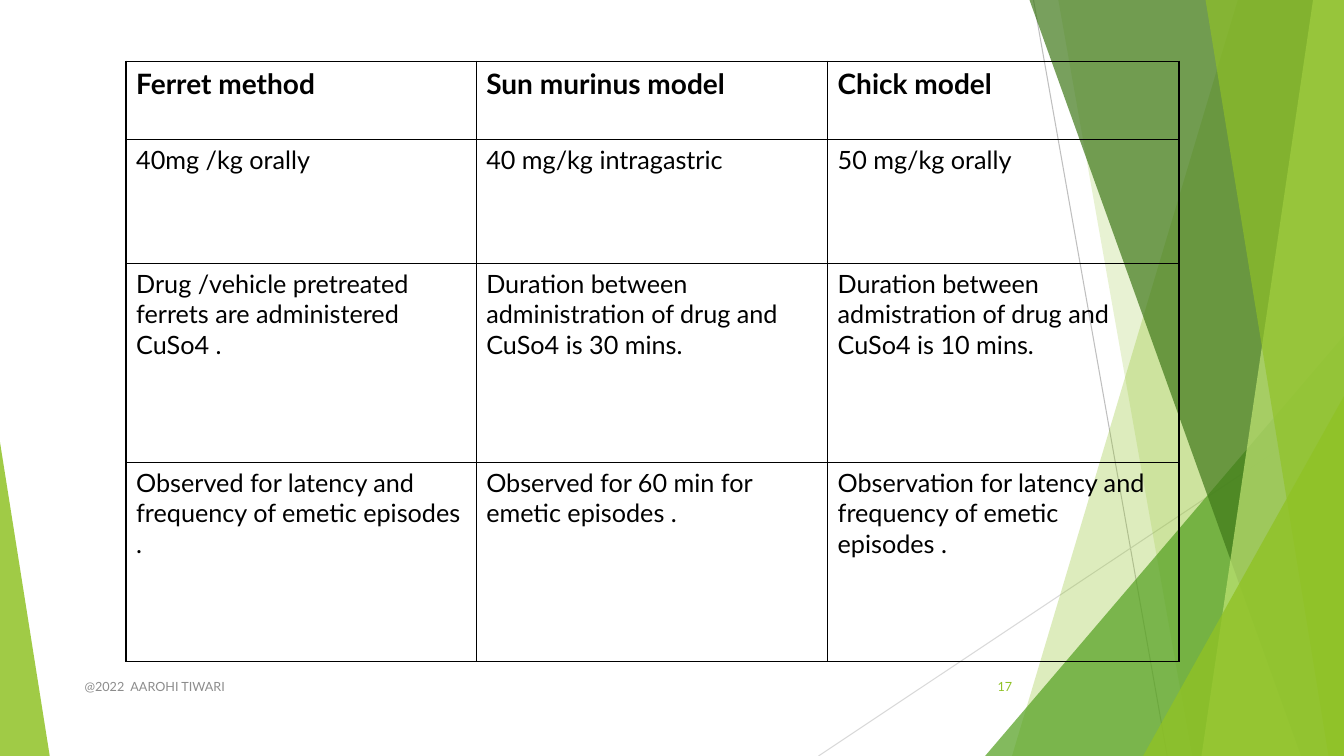
from pptx import Presentation
from pptx.dml.color import RGBColor as Rgb
from pptx.enum.shapes import MSO_CONNECTOR as Link, MSO_SHAPE as Kind
from pptx.enum.text import MSO_ANCHOR as Anchor, PP_ALIGN as Align
from pptx.oxml import parse_xml
from pptx.oxml.ns import nsdecls, qn
from pptx.util import Inches, Pt
from lxml.etree import SubElement as Sub

HUES = {
    "lime": "90C226", "leaf": "54A021", "moss": "3F7819", "pale": "C0E474",
    "ash": "BFBFBF", "mist": "D9D9D9", "gray": "8C8C8C", "ink": "000000",
}
FONT = "Lato"
WIDE, HIGH = Inches(13.333), Inches(7.5)

LINES = [(76.9, 0, 86.85, 100, "ash"), (100, 53.7, 60.9, 100, "mist")]
FACETS = [
    ("band", 92.1, 75.3, "lime", 30),
    ("band", 78.75, 88.7, "lime", 20),
    ("peak", 73.3, 44.4, "leaf", 72),
    ("band", 76.6, 96.8, "moss", 70),
    ("band", 97.7, 89.4, "pale", 70),
    ("band", 89.7, 98.85, "lime", 65),
    ("peak", 85.05, 52.4, "lime", 80),
]
COLS = [26.05, 26.15, 26.15]
ROWS = [10.4, 16.4, 26.3, 26.3]
CELLS = [
    ["Ferret method", "Sun murinus model", "Chick model"],
    ["40mg /kg orally", "40 mg/kg intragastric", "50 mg/kg orally"],
    ["Drug /vehicle pretreated ferrets are administered  CuSo4 .",
     "Duration between administration of drug and CuSo4 is 30 mins.",
     "Duration between admistration of drug and CuSo4 is 10 mins."],
    ["Observed for latency and frequency of emetic episodes .",
     "Observed for 60 min for emetic episodes .",
     "Observation for latency and frequency of emetic episodes ."],
]


def across(share):
    return round(WIDE * share / 100)


def down(share):
    return round(HIGH * share / 100)


def place(box):
    left, top, wide, high = box
    return across(left), down(top), across(wide), down(high)


def write(frame, text, size=18, hue="ink", bold=False, align=Align.LEFT):
    frame.word_wrap = True
    para = frame.paragraphs[0]
    para.alignment = align
    run = para.add_run()
    run.text = text
    font = run.font
    font.name, font.size, font.bold = FONT, Pt(size), bold
    font.color.rgb = Rgb.from_string(HUES[hue])


def tint(shape, hue, alpha):
    shape.shadow.inherit = False
    shape.line.fill.background()
    shape.fill.solid()
    shape.fill.fore_color.rgb = Rgb.from_string(HUES[hue])
    tone = next(shape.fill._xPr.iter(qn("a:srgbClr")))
    Sub(tone, qn("a:alpha"), val=str(alpha * 1000))


def rule(slide, x1, y1, x2, y2, hue):
    line = slide.shapes.add_connector(
        Link.STRAIGHT, across(x1), down(y1), across(x2), down(y2))
    line.line.width = Pt(0.75)
    line.line.color.rgb = Rgb.from_string(HUES[hue])
    Sub(line._element.spPr, qn("a:effectLst"))


def band(slide, box, head, foot):
    left, top, wide, high = box
    right, base = left + wide, top + high
    spots = [(right, top), (right, base), (foot, base)]
    pen = slide.shapes.build_freeform(across(head), down(top))
    pen.add_line_segments([(across(x), down(y)) for x, y in spots], close=True)
    return pen.convert_to_shape()


def peak(slide, box, lean):
    shape = slide.shapes.add_shape(Kind.ISOSCELES_TRIANGLE, *place(box))
    shape.adjustments[0] = lean
    return shape


def decor(slide, box):
    left, top, wide, high = box
    right, base = left + wide, top + high
    for line in LINES:
        rule(slide, *line)
    for kind, first, second, hue, alpha in FACETS:
        if kind == "band":
            shape = band(slide, box, first, second)
        else:
            shape = peak(slide, (first, second, right - first, base - second), 1)
        tint(shape, hue, alpha)
    tint(peak(slide, (left, 58.5, 3.7, base - 58.5), 0), "lime", 85)


def edge(cell):
    props = cell._tc.get_or_add_tcPr()
    for side in "LRTB":
        props.append(parse_xml(
            f'<a:ln{side} {nsdecls("a")} w="12700"><a:solidFill>'
            f'<a:srgbClr val="{HUES["ink"]}"/></a:solidFill></a:ln{side}>'))
    cell.fill.background()


def models(slide, box):
    table = slide.shapes.add_table(len(ROWS), len(COLS), *place(box)).table
    table.horz_banding = table.first_row = False
    for col, share in zip(table.columns, COLS):
        col.width = across(share)
    for row, share, texts in zip(table.rows, ROWS, CELLS):
        row.height = down(share)
        head = texts is CELLS[0]
        for cell, text in zip(row.cells, texts):
            edge(cell)
            write(cell.text_frame, text, size=20 if head else 18, bold=head)


def label(slide, box, text, **form):
    frame = slide.shapes.add_textbox(*place(box)).text_frame
    frame.vertical_anchor = Anchor.MIDDLE
    write(frame, text, size=9, **form)


def footer(slide, box):
    left, top, wide, high = box
    label(slide, (left, top, wide * 0.73, high), "@2022  AAROHI TIWARI", hue="gray")
    label(slide, (left + wide * 0.92, top, wide * 0.08, high), "17",
          hue="lime", align=Align.RIGHT)


def main():
    deck = Presentation()
    deck.slide_width, deck.slide_height = WIDE, HIGH
    slide = deck.slides.add_slide(deck.slide_layouts[6])
    decor(slide, (0, 0, 100, 100))
    models(slide, (9.38, 8.1, sum(COLS), sum(ROWS)))
    footer(slide, (5.55, 88.1, 70.5, 5.4))
    deck.save("out.pptx")


if __name__ == "__main__":
    main()
